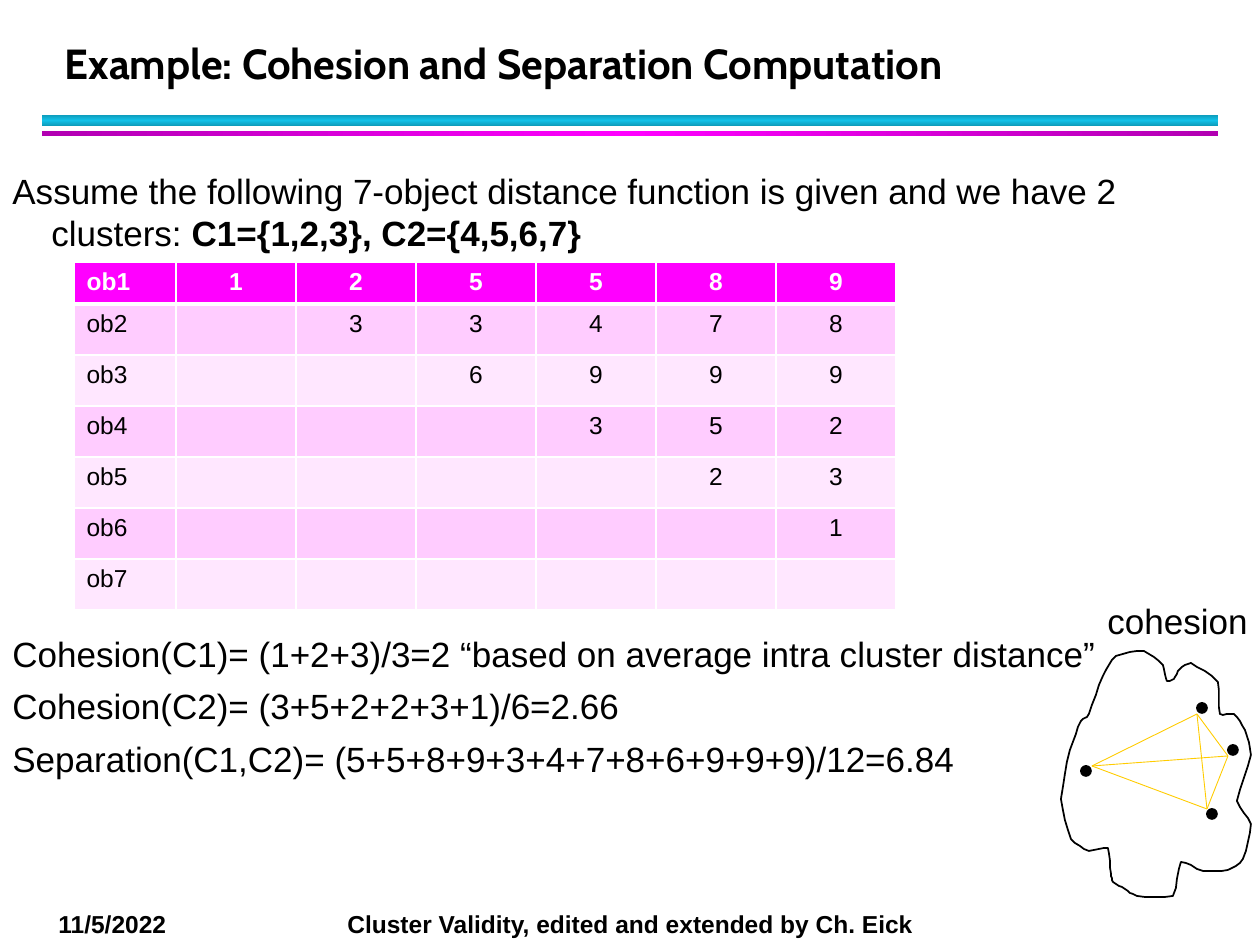
from copy import deepcopy
from pptx import Presentation
from pptx.dml.color import RGBColor
from pptx.enum.shapes import MSO_CONNECTOR as Link, MSO_SHAPE as Kind
from pptx.enum.text import MSO_ANCHOR as Anchor, PP_ALIGN as Align
from pptx.oxml.ns import qn
from pptx.oxml.xmlchemy import OxmlElement as Node
from pptx.util import Pt

PX = 914400 // 126
rgb = RGBColor.from_string


def px(*nums):
    return [round(n * PX) for n in nums]


def write(para, text, hue="000000", **fmt):
    run = para.add_run()
    run.text = text
    for key, val in {"name": "Arial", "size": Pt(20), "bold": False, **fmt}.items():
        setattr(run.font, key, val)
    run.font.color.rgb = rgb(hue)


deck = Presentation()
deck.slide_width, deck.slide_height = px(1260, 945)
slide = deck.slides.add_slide(deck.slide_layouts[5])
shapes = slide.shapes

bars = [((42, 115, 1176, 11), 90, "0E9BBA", "12C2E9"),
        ((42, 131, 1176, 5), 0, "B200B2", "FF00FF")]
for box, angle, edge, mid in bars:
    bar = shapes.add_shape(Kind.RECTANGLE, *px(*box))
    bar.shadow.inherit = False
    bar.line.fill.background()
    bar.fill.gradient()
    bar.fill.gradient_angle = angle
    stops = bar._element.spPr.find(".//" + qn("a:gsLst"))
    stops.insert(1, deepcopy(stops[0]))
    for stop, pos, hue in zip(bar.fill.gradient_stops, (0, 0.5, 1), (edge, mid, edge)):
        stop.position = pos
        stop.color.rgb = rgb(hue)

title = shapes.title
for key, val in zip(("left", "top", "width", "height"), px(52, 21, 1142, 73)):
    setattr(title, key, val)
title.text_frame.vertical_anchor = Anchor.BOTTOM
para = title.text_frame.paragraphs[0]
para.alignment = Align.LEFT
para.line_spacing = Pt(36)
write(para, "Example: Cohesion and Separation Computation", name="Cabin", size=Pt(24), bold=True)

blocks = [
    ((0, 163, 1186, 98), [[
        ("Assume the following 7-object distance function is given and we have 2 clusters: ", False),
        ("C1={1,2,3}, C2={4,5,6,7}", True)]]),
    ((0, 626, 1186, 170), [
        [("Cohesion(C1)= (1+2+3)/3=2 “based on average intra cluster distance”", False)],
        [("Cohesion(C2)= (3+5+2+2+3+1)/6=2.66", False)],
        [("Separation(C1,C2)= (5+5+8+9+3+4+7+8+6+9+9+9)/12=6.84", False)]]),
]
for box, lines in blocks:
    frame = shapes.add_textbox(*px(*box)).text_frame
    frame.word_wrap = True
    for i, parts in enumerate(lines):
        para = frame.add_paragraph() if i else frame.paragraphs[0]
        para.space_after = Pt(6)
        props = para._p.get_or_add_pPr()
        props.set("marL", str(39 * PX))
        props.set("indent", str(-39 * PX))
        for text, bold in parts:
            write(para, text, bold=bold)

rows = ["125589", " 33478", "  6999", "   352", "    23", "     1", "      "]
grid = shapes.add_table(7, 7, *px(74, 262, 822, 346)).table
for i, col in enumerate(grid.columns):
    col.width = px(120 if i else 102)[0]
for r, vals in enumerate(rows):
    grid.rows[r].height = px(51 if r else 40)[0]
    for c, text in enumerate([f"ob{r + 1}", *vals]):
        cell = grid.cell(r, c)
        para = cell.text_frame.paragraphs[0]
        para.alignment = Align.CENTER if c else Align.LEFT
        if text.strip():
            write(para, text, "000000" if r else "FFFFFF", size=Pt(14), bold=r == 0)
        props = cell._tc.get_or_add_tcPr()
        for side in "LRTB":
            thick = (r == 0 and side == "B") or (r == 1 and side == "T")
            edge = Node("a:ln" + side)
            edge.set("w", str(Pt(3 if thick else 1)))
            fill = Node("a:solidFill")
            hue = Node("a:srgbClr")
            hue.set("val", "FFFFFF")
            fill.append(hue)
            edge.append(fill)
            props.append(edge)
        cell.fill.solid()
        cell.fill.fore_color.rgb = rgb("FF00FF" if r == 0 else "FFCCFF" if r % 2 else "FFE7FF")

knots = [(1081, 721), (1070, 750), (1061, 799), (1071, 839), (1089, 851), (1108, 848),
         (1111, 873), (1113, 882), (1125, 889), (1137, 896), (1173, 896), (1181, 862),
         (1203, 871), (1228, 870), (1243, 859), (1251, 824), (1237, 801), (1251, 755),
         (1245, 730), (1234, 714), (1220, 714), (1218, 682), (1191, 663), (1180, 669),
         (1174, 679), (1167, 681), (1163, 665), (1144, 651), (1116, 656), (1103, 676),
         (1089, 714)]
curve = []
for i, here in enumerate(knots):
    last, aim, next = knots[i - 1], knots[(i + 1) % len(knots)], knots[(i + 2) % len(knots)]
    for t in (0, 0.25, 0.5, 0.75):
        u = 1 - t
        curve.append([u * b + t * c + t * u * (u * (2 * b - a - c) + t * (2 * c - b - d)) / 4
                      for a, b, c, d in zip(last, here, aim, next)])
pen = shapes.build_freeform(*curve[0], scale=PX)
pen.add_line_segments(curve[1:], close=True)
blob = pen.convert_to_shape()
blob.shadow.inherit = False
blob.fill.background()
blob.line.color.rgb = rgb("000000")
blob.line.width = Pt(1)

for x, y in [(1207, 809), (1197, 703), (1081, 766), (1228, 745)]:
    dot = shapes.add_shape(Kind.OVAL, *px(x, y, 10, 10))
    dot.shadow.inherit = False
    dot.fill.solid()
    dot.fill.fore_color.rgb = dot.line.color.rgb = rgb("000000")
    dot.line.width = Pt(1)

west, north, south, east = (1092, 766), (1197, 714), (1207, 809), (1228, 756)
for start, end in [(west, north), (south, north), (west, south),
                   (east, north), (east, west), (east, south)]:
    link = shapes.add_connector(Link.STRAIGHT, *px(*start, *end))
    link.line.color.rgb = rgb("FFCC00")
    link.line.width = Pt(0.5)
    link._element.spPr.append(Node("a:effectLst"))

label = shapes.add_textbox(*px(1095, 593, 165, 54)).text_frame
label.word_wrap = False
label.margin_right = 0
write(label.paragraphs[0], "cohesion")

foot = shapes.add_textbox(*px(46, 903, 1176, 41)).text_frame
foot.word_wrap = True
para = foot.paragraphs[0]
tabs = Node("a:tabLst")
tab = Node("a:tab")
tab.set("pos", str(289 * PX))
tab.set("algn", "l")
tabs.append(tab)
para._p.get_or_add_pPr().append(tabs)
write(para, "11/5/2022\tCluster Validity, edited and extended by Ch. Eick", size=Pt(14), bold=True)

deck.save("out.pptx")
